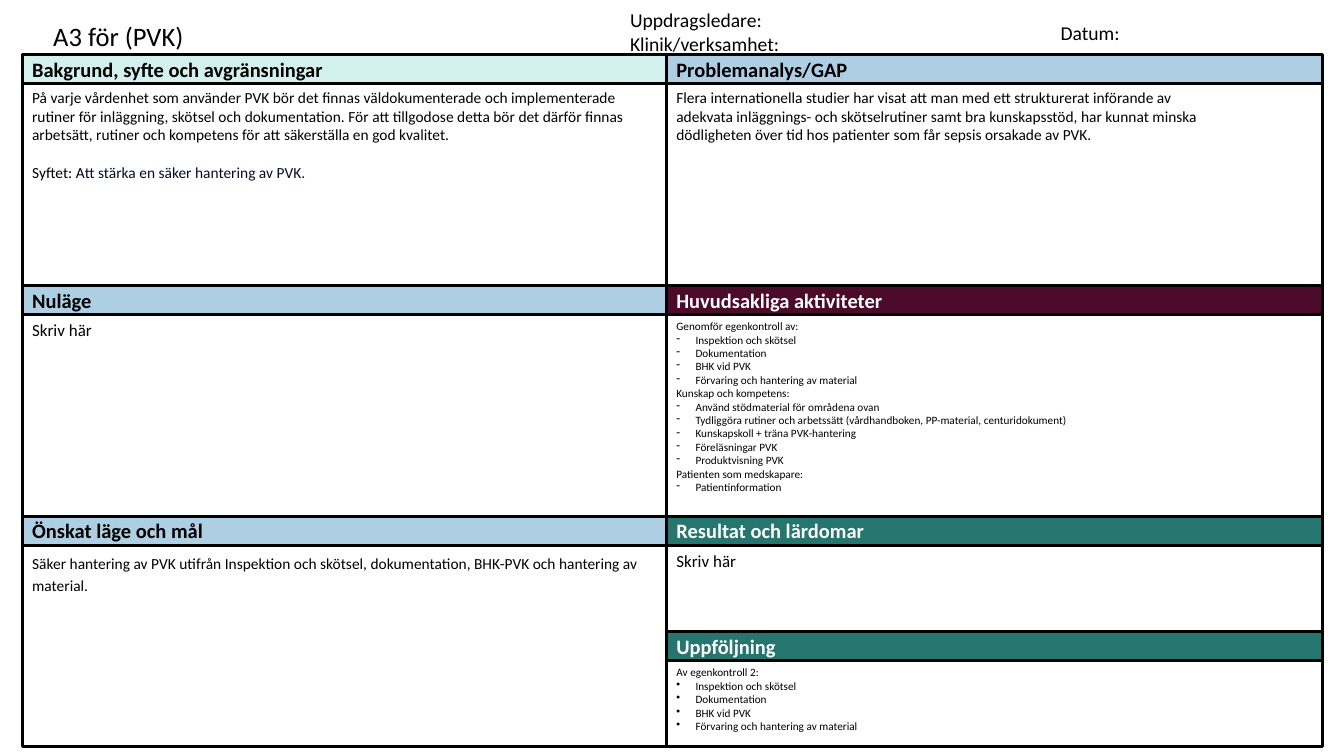
from pptx import Presentation
from pptx.dml.color import RGBColor
from pptx.enum.shapes import MSO_SHAPE as Shape
from pptx.enum.text import MSO_ANCHOR as Anchor, MSO_AUTO_SIZE as Fit, PP_ALIGN as Align
from pptx.oxml.xmlchemy import OxmlElement as Element
from pptx.util import Inches, Pt

LEFT, TOP = 0.22, 0.54
WIDTHS = 6.39, 6.51
ROW, HEAD = 2.29, 0.29
BLACK, WHITE, NAVY = "000000", "FFFFFF", "040C28"
MINT, BLUE, WINE, TEAL = "D1F0EE", "ADCEE3", "4D0B2C", "26766F"

CHECKS = ["Inspektion och skötsel", "Dokumentation", "BHK vid PVK",
          "Förvaring och hantering av material"]
PURPOSE = ["På varje vårdenhet som använder PVK bör det finnas väldokumenterade och "
           "implementerade rutiner för inläggning, skötsel och dokumentation. För att "
           "tillgodose detta bör det därför finnas arbetsätt, rutiner och kompetens "
           "för att säkerställa en god kvalitet.",
           [("Syftet: A", BLACK), ("tt stärka en säker hantering av PVK.", NAVY)]]
GAP = ["Flera internationella studier har visat att man med ett strukturerat införande av "
       "adekvata inläggnings- och skötselrutiner samt bra kunskapsstöd, har kunnat minska "
       "dödligheten över tid hos patienter som får sepsis orsakade av PVK."]
GOAL = ["Säker hantering av PVK utifrån Inspektion och skötsel, dokumentation, BHK-PVK "
        "och\u00a0hantering av material."]
TASKS = [("Genomför egenkontroll av:", CHECKS),
         ("Kunskap och kompetens:",
          ["Använd stödmaterial för områdena ovan",
           "Tydliggöra rutiner och arbetssätt (vårdhandboken, PP-material, centuridokument)",
           "Kunskapskoll + träna PVK-hantering", "Föreläsningar PVK", "Produktvisning PVK"]),
         ("Patienten som medskapare:", ["Patientinformation"])]
REVIEW = [("Av egenkontroll 2:", CHECKS)]


def color(code):
    """Turn a hex string into a colour."""
    return RGBColor.from_string(code)


def style(para, size, ink=BLACK, bold=False):
    """Set the font of a whole paragraph."""
    para.alignment = Align.LEFT
    font = para.font
    font.name, font.size, font.bold = "Calibri", Pt(size), bold
    font.color.rgb = color(ink)


def paras(frame, count):
    """Return the first paragraph and as many new ones as needed."""
    return [frame.paragraphs[0]] + [frame.add_paragraph() for _ in range(count - 1)]


def prose(frame, texts, size, gap=0, lead=None):
    """Write plain paragraphs, or ones made of coloured runs."""
    for i, (para, text) in enumerate(zip(paras(frame, len(texts)), texts)):
        if isinstance(text, str):
            para.text = text
        else:
            for words, ink in text:
                run = para.add_run()
                run.text = words
                run.font.color.rgb = color(ink)
        if i and gap:
            para.space_before = Pt(gap)
        if lead:
            para.line_spacing = Pt(lead)
        style(para, size)


def bullet(para, mark):
    """Give a paragraph a bullet and a hanging indent."""
    props = para._p.get_or_add_pPr()
    props.set("marL", str(Inches(0.19)))
    props.set("indent", str(Inches(-0.19)))
    char = Element("a:buChar")
    char.set("char", mark)
    props.append(char)


def lists(frame, groups, mark):
    """Write lead lines, each with its bulleted items."""
    lines = [(text, i > 0) for lead, items in groups for i, text in enumerate([lead, *items])]
    for para, (text, item) in zip(paras(frame, len(lines)), lines):
        para.text = text
        if item:
            bullet(para, mark)
        style(para, 8)


def block(slide, box, fill=None, anchor=Anchor.TOP):
    """Draw an outlined rectangle and return its text frame."""
    rect = slide.shapes.add_shape(Shape.RECTANGLE, *map(Inches, box))
    rect.shadow.inherit = False
    if fill:
        rect.fill.solid()
        rect.fill.fore_color.rgb = color(fill)
    else:
        rect.fill.background()
    rect.line.color.rgb = color(BLACK)
    rect.line.width = Pt(2)
    frame = rect.text_frame
    frame.word_wrap, frame.vertical_anchor = True, anchor
    return frame


def panel(slide, box, title, fill, ink=BLACK):
    """Draw a titled panel and return the text frame of its body."""
    x, y, w, h = box
    body = block(slide, (x, y + HEAD, w, h - HEAD))
    head = block(slide, (x, y, w, HEAD), fill, Anchor.MIDDLE).paragraphs[0]
    head.text = title
    style(head, 14.6, ink, True)
    return body


def cell(col, row, span=1):
    """Return the box of a cell in the panel grid."""
    return LEFT + sum(WIDTHS[:col]), TOP + row * ROW, WIDTHS[col], span * ROW


def label(slide, box, texts, size):
    """Place a heading text box above the grid."""
    area = slide.shapes.add_textbox(*map(Inches, box))
    frame = area.text_frame
    frame.word_wrap, frame.auto_size = True, Fit.SHAPE_TO_FIT_TEXT
    prose(frame, texts, size)


def header(slide):
    """Place the labels above the grid."""
    label(slide, (0.43, 0.15, 6.24, 0.43), ["A3 för (PVK)"], 19)
    label(slide, (6.15, 0.03, 3.75, 0.57), ["Uppdragsledare:", "Klinik/verksamhet:"], 14)
    label(slide, (10.42, 0.16, 2.69, 0.34), ["Datum:"], 14)


def left(slide):
    """Fill the left column of panels."""
    prose(panel(slide, cell(0, 0), "Bakgrund, syfte och avgränsningar", MINT),
          PURPOSE, 11, gap=13.4)
    prose(panel(slide, cell(0, 1), "Nuläge", BLUE), ["Skriv här"], 12.1)
    prose(panel(slide, cell(0, 2), "Önskat läge och mål", BLUE), GOAL, 11, lead=15.8)


def right(slide):
    """Fill the right column of panels."""
    gap = panel(slide, cell(1, 0), "Problemanalys/GAP", BLUE)
    gap.margin_right = Inches(1)
    prose(gap, GAP, 11)
    lists(panel(slide, cell(1, 1), "Huvudsakliga aktiviteter", WINE, WHITE), TASKS, "-")
    prose(panel(slide, cell(1, 2, 0.5), "Resultat och lärdomar", TEAL, WHITE),
          ["Skriv här"], 12.1)
    lists(panel(slide, cell(1, 2.5, 0.5), "Uppföljning", TEAL, WHITE), REVIEW, "•")


def main():
    """Build the slide and save it."""
    deck = Presentation()
    deck.slide_width, deck.slide_height = Inches(13.33), Inches(7.5)
    slide = deck.slides.add_slide(deck.slide_layouts[6])
    header(slide)
    left(slide)
    right(slide)
    deck.save("out.pptx")


if __name__ == "__main__":
    main()
